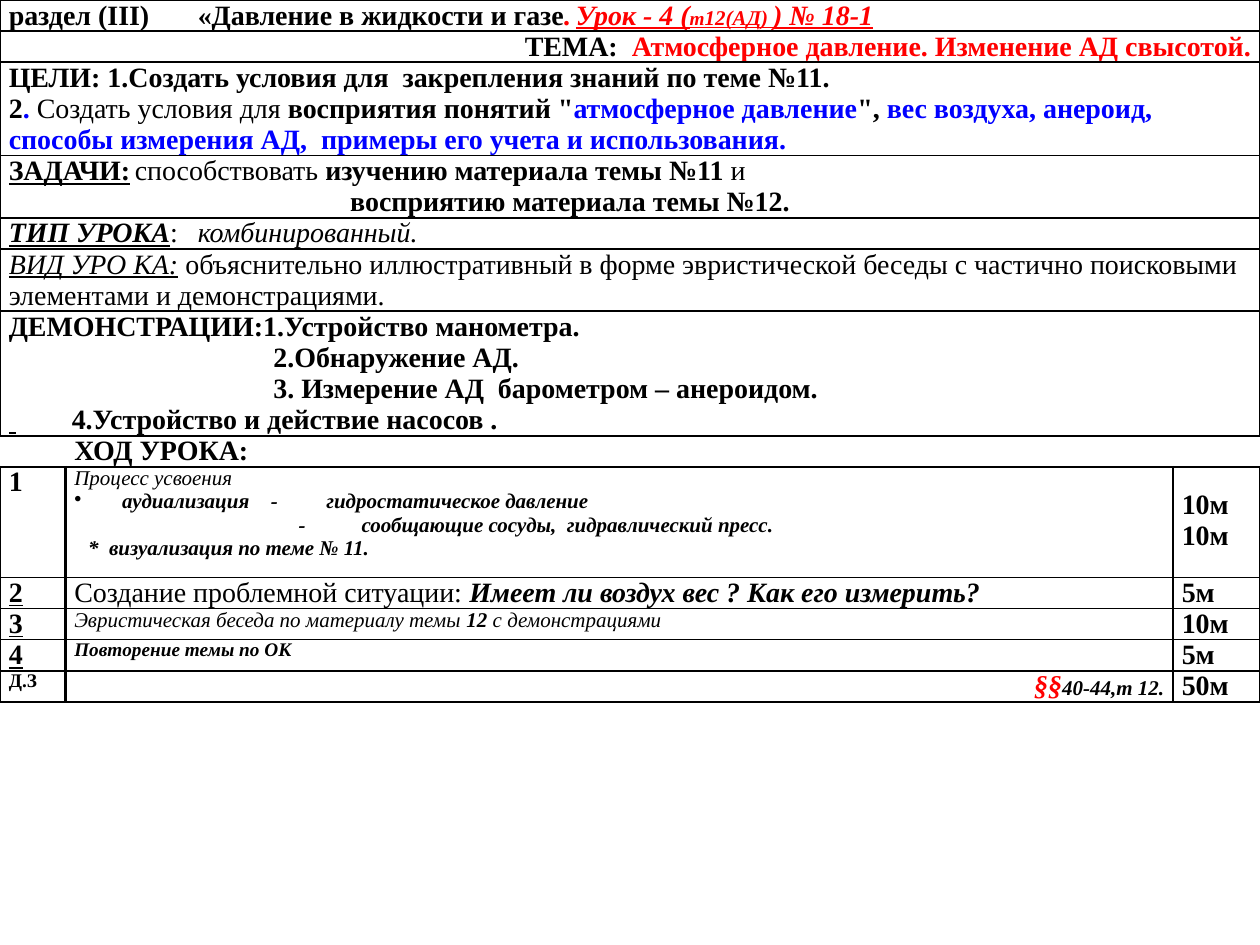
from lxml.etree import SubElement
from pptx import Presentation
from pptx.dml.color import RGBColor
from pptx.enum.text import PP_ALIGN as Align
from pptx.oxml.ns import qn
from pptx.util import Inches, Pt

WIDE, HIGH = 10, 7.5
LINE = 0.24  # height of one text line, inches
COLS = (0.052, 0.879, 0.069)  # shares of the slide width
ROWS = (1, 1, 3, 2, 1, 2, 4, 1, 3.65, 1, 1, 1, 1)  # heights in lines
FONT = "Times New Roman"
BLACK = RGBColor(0, 0, 0)
RED = RGBColor(255, 0, 0)
BLUE = RGBColor(0, 0, 255)
THIN, BOLD = 1, 1.5


def run(text, style="b", color=BLACK, size=16):
    """One piece of text; style holds any of the letters b, i, u."""
    return text, style, color, size


def para(*runs, align=None, left=0, first=0, tabs=(), bullet=None):
    return runs, align, left, first, tabs, bullet


def plain(text, **form):
    return [para(run(text, **form))]


def write(par, runs, align, left, first, tabs, bullet):
    """Fill a paragraph with its runs, indents, tab stops and bullet."""
    par.alignment = align
    props = par._p.get_or_add_pPr()
    props.set("marL", str(Inches(left)))
    props.set("indent", str(Inches(first)))
    if bullet:
        SubElement(props, qn("a:buChar"), char=bullet)
    else:
        SubElement(props, qn("a:buNone"))
    if tabs:
        stops = SubElement(props, qn("a:tabLst"))
        for stop in tabs:
            SubElement(stops, qn("a:tab"), pos=str(Inches(stop)), algn="l")
    for text, style, color, size in runs:
        piece = par.add_run()
        piece.text = text
        font = piece.font
        font.name, font.size = FONT, Pt(size)
        font.bold, font.italic = "b" in style, "i" in style
        font.underline = "u" in style
        font.color.rgb = color


def edge(cell, left, top, right, bottom):
    """Draw the four borders; a width of 0 means no line."""
    props = cell._tc.get_or_add_tcPr()
    for side, width in zip("LRTB", (left, right, top, bottom)):
        line = SubElement(props, qn("a:ln" + side), w=str(Pt(width)))
        if width:
            fill = SubElement(line, qn("a:solidFill"))
            SubElement(fill, qn("a:srgbClr"), val=str(BLACK))
        else:
            SubElement(line, qn("a:noFill"))


def fill_cell(cell, paras, sides, top=0):
    cell.margin_left = cell.margin_right = Inches(0.07)
    cell.margin_top, cell.margin_bottom = Inches(top), 0
    edge(cell, *sides)
    cell.fill.background()
    frame = cell.text_frame
    for num, item in enumerate(paras):
        write(frame.add_paragraph() if num else frame.paragraphs[0], *item)
    if not paras:
        frame.paragraphs[0]._p.get_or_add_endParaRPr().set("sz", "1100")


def add_grid(slide):
    shape = slide.shapes.add_table(len(ROWS), len(COLS), 0, 0, Inches(WIDE),
                                   Inches(LINE * sum(ROWS)))
    grid = shape.table
    grid.first_row = grid.horz_banding = False
    for col, share in zip(grid.columns, COLS):
        col.width = Inches(share * WIDE)
    for row, lines in zip(grid.rows, ROWS):
        row.height = Inches(lines * LINE)
    return grid


# Lesson header: one merged cell per row, with its top and bottom line
HEAD = [
    ([para(run("раздел (III)\t«Давление в жидкости и газе"),
           run(".\t", "bi", RED), run("Урок - 4 (", "biu", RED),
           run("т", "biu", RED, 11), run("12(АД)", "biu", RED, 12),
           run(" ", "biu", RED, 11), run(") № 18-1", "biu", RED),
           tabs=(1.39, 6.18))], THIN, BOLD),
    ([para(run("ТЕМА:  "),
           run("Атмосферное давление. Изменение АД свысотой.", color=RED),
           align=Align.RIGHT)], BOLD, BOLD),
    ([para(run("ЦЕЛИ: 1.Создать условия для  закрепления знаний по теме №11.")),
      para(run("2"), run(". ", color=BLUE), run("Создать условия для ", ""),
           run('восприятия понятий "'),
           run("атмосферное давление", color=BLUE), run('", '),
           run("вес воздуха, анероид,  способы измерения АД,  "
               "примеры его учета и использования.", color=BLUE))],
     BOLD, THIN),
    ([para(run("ЗАДАЧИ:", "bu"), run("\tспособствовать ", ""),
           run("изучению материала темы №11"), run(" и", ""), tabs=(1.13,)),
      para(run("восприятию материала темы №12."), left=2.71)], THIN, BOLD),
    ([para(run("ТИП УРОКА", "biu"), run(":", ""),
           run("\tкомбинированный.", "i"), tabs=(1.62,))], BOLD, BOLD),
    ([para(run("ВИД УРО КА:", "iu"),
           run(" объяснительно иллюстративный в форме эвристической беседы "
               "с частично поисковыми элементами и демонстрациями.", ""))],
     BOLD, BOLD),
    ([para(run("ДЕМОНСТРАЦИИ:1.Устройство манометра.")),
      para(run("2.Обнаружение АД."), left=2.1),
      para(run("3. Измерение АД  барометром – анероидом."), left=2.1),
      para(run(" ", "biu"), run("\t4.Устройство и действие насосов ."),
           tabs=(2.1,))], BOLD, BOLD),
]

# Lesson steps: number, content, time
STEPS = [
    (plain("1"),
     [para(run("Процесс усвоения", "i", size=12)),
      para(run("аудиализация\t-\tгидростатическое давление", "bi", size=12),
           left=0.38, first=-0.38, tabs=(1.38, 1.56), bullet="•"),
      para(run("-\tсообщающие сосуды,  гидравлический пресс.", "bi", size=12),
           left=1.78, tabs=(0.18,)),
      para(run("*  визуализация по теме № 11.", "bi", size=12), left=0.11)],
     plain("10м") * 2),
    (plain("2", style="bu"),
     [para(run("Создание проблемной ситуации: ", ""),
           run("Имеет ли воздух вес ? Как его измерить?", "bi"))],
     plain("5м")),
    (plain("3", style="bu"),
     [para(run("Эвристическая беседа по материалу темы", "i", size=12),
           run(" 12", "bi", size=12),
           run(" с демонстрациями", "i", size=12))],
     plain("10м")),
    (plain("4", style="bu"),
     plain("Повторение темы по ОК", style="bi", size=11),
     plain("5м")),
    (plain("Д.З", size=11),
     [para(run("§§", "bi", RED), run("40-44,т 12.", "bi", size=12),
           align=Align.RIGHT)],
     plain("50м")),
]


def add_head(grid):
    for row, (paras, top, bottom) in enumerate(HEAD):
        grid.cell(row, 0).merge(grid.cell(row, 2))
        for col in range(3):
            fill_cell(grid.cell(row, col), paras if col == 0 else [],
                      (THIN, top, THIN, bottom))


def add_title(grid, row):
    for col, paras in enumerate(([], plain("ХОД УРОКА:"), [])):
        fill_cell(grid.cell(row, col), paras, (0, BOLD, 0, BOLD))


def add_steps(grid, start):
    walls = (BOLD, BOLD, THIN, THIN)  # vertical lines, left to right
    for num, step in enumerate(STEPS):
        top = BOLD if num == 0 else THIN
        bottom = BOLD if num == len(STEPS) - 1 else THIN
        for col, paras in enumerate(step):
            # The first time sits one small line lower
            drop = 0.18 if num == 0 and col == 2 else 0
            fill_cell(grid.cell(start + num, col), paras,
                      (walls[col], top, walls[col + 1], bottom), drop)


def main():
    deck = Presentation()
    deck.slide_width, deck.slide_height = Inches(WIDE), Inches(HIGH)
    slide = deck.slides.add_slide(deck.slide_layouts[6])
    grid = add_grid(slide)
    add_head(grid)
    add_title(grid, len(HEAD))
    add_steps(grid, len(HEAD) + 1)
    deck.save("out.pptx")


if __name__ == "__main__":
    main()
